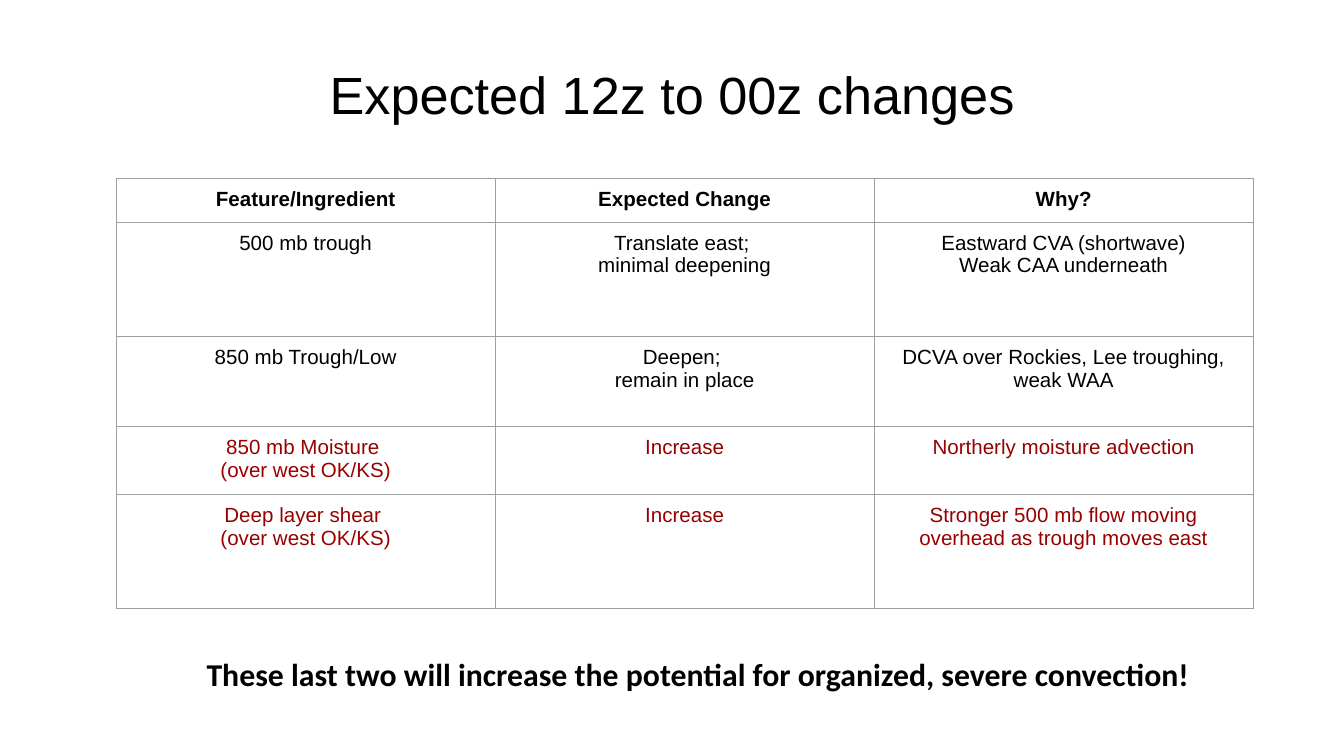
from lxml import etree
from pptx import Presentation
from pptx import util as u
from pptx.dml.color import RGBColor
from pptx.enum import text
from pptx.oxml import ns

PX = 4572  # EMU per px, 200 px to the inch
BLACK = RGBColor(0x00, 0x00, 0x00)
DARK_RED = RGBColor(0x98, 0x00, 0x00)
GREY = RGBColor(0x9E, 0x9E, 0x9E)

COLUMN_WIDTH = 564
ROW_HEIGHTS = [64, 170, 134, 100, 170]
HEADER = ["Feature/Ingredient", "Expected Change", "Why?"]
# Each line of a cell is its own paragraph
CHANGES = [
    (BLACK, ["500 mb trough", "Translate east; \nminimal deepening",
             "Eastward CVA (shortwave)\nWeak CAA underneath"]),
    (BLACK, ["850 mb Trough/Low", "Deepen; \nremain in place",
             "DCVA over Rockies, Lee troughing, weak WAA"]),
    (DARK_RED, ["850 mb Moisture \n(over west OK/KS)", "Increase",
                "Northerly moisture advection"]),
    (DARK_RED, ["Deep layer shear \n(over west OK/KS)", "Increase",
                "Stronger 500 mb flow moving overhead as trough moves east"]),
]


def px(length):
    return u.Emu(length * PX)


def write(frame, words, size, font="Arial", color=BLACK, bold=False):
    for index, line in enumerate(words.split("\n")):
        para = frame.paragraphs[0] if index == 0 else frame.add_paragraph()
        para.alignment = text.PP_ALIGN.CENTER
        span = para.add_run()
        span.text = line
        span.font.size = u.Pt(size)
        span.font.name = font
        span.font.bold = bold
        span.font.color.rgb = color


def set_margins(target, side, end):
    target.margin_left = target.margin_right = px(side)
    target.margin_top = target.margin_bottom = px(end)


def add_text(page, area, words, margin, anchor, **style):
    box = page.shapes.add_textbox(*map(px, area))
    frame = box.text_frame
    frame.word_wrap = True
    frame.vertical_anchor = anchor
    set_margins(frame, 20, margin)
    write(frame, words, **style)


def add_borders(cell):
    properties = cell._tc.get_or_add_tcPr()
    for side in ("a:lnL", "a:lnR", "a:lnT", "a:lnB"):
        line = etree.SubElement(properties, ns.qn(side), w=str(u.Pt(0.75)))
        fill = etree.SubElement(line, ns.qn("a:solidFill"))
        etree.SubElement(fill, ns.qn("a:srgbClr"), val=str(GREY))


def add_changes_table(page, left, top):
    rows = [(BLACK, HEADER)] + CHANGES
    frame = page.shapes.add_table(
        len(rows), len(HEADER), px(left), px(top),
        px(COLUMN_WIDTH * len(HEADER)), px(sum(ROW_HEIGHTS)))
    table = frame.table
    table.horz_banding = False
    table.first_row = False
    for column in table.columns:
        column.width = px(COLUMN_WIDTH)
    for row_index, (color, entries) in enumerate(rows):
        table.rows[row_index].height = px(ROW_HEIGHTS[row_index])
        for column_index, words in enumerate(entries):
            cell = table.cell(row_index, column_index)
            set_margins(cell, 20, 14)
            add_borders(cell)
            cell.fill.background()
            write(cell.text_frame, words, 11, color=color, bold=row_index == 0)


def main():
    deck = Presentation()
    deck.slide_width, deck.slide_height = px(2000), px(1125)
    page = deck.slides.add_slide(deck.slide_layouts[6])

    # Title
    add_text(page, (100, 46, 1800, 188), "Expected 12z to 00z changes",
             10, text.MSO_ANCHOR.MIDDLE, size=28)
    # Table of changes
    add_changes_table(page, 173, 266)
    # Conclusion
    add_text(page, (272, 955, 1534, 98),
             "These last two will increase the potential for organized, severe convection!",
             20, text.MSO_ANCHOR.TOP, size=17, font="Calibri", bold=True)

    deck.save("out.pptx")


if __name__ == "__main__":
    main()
